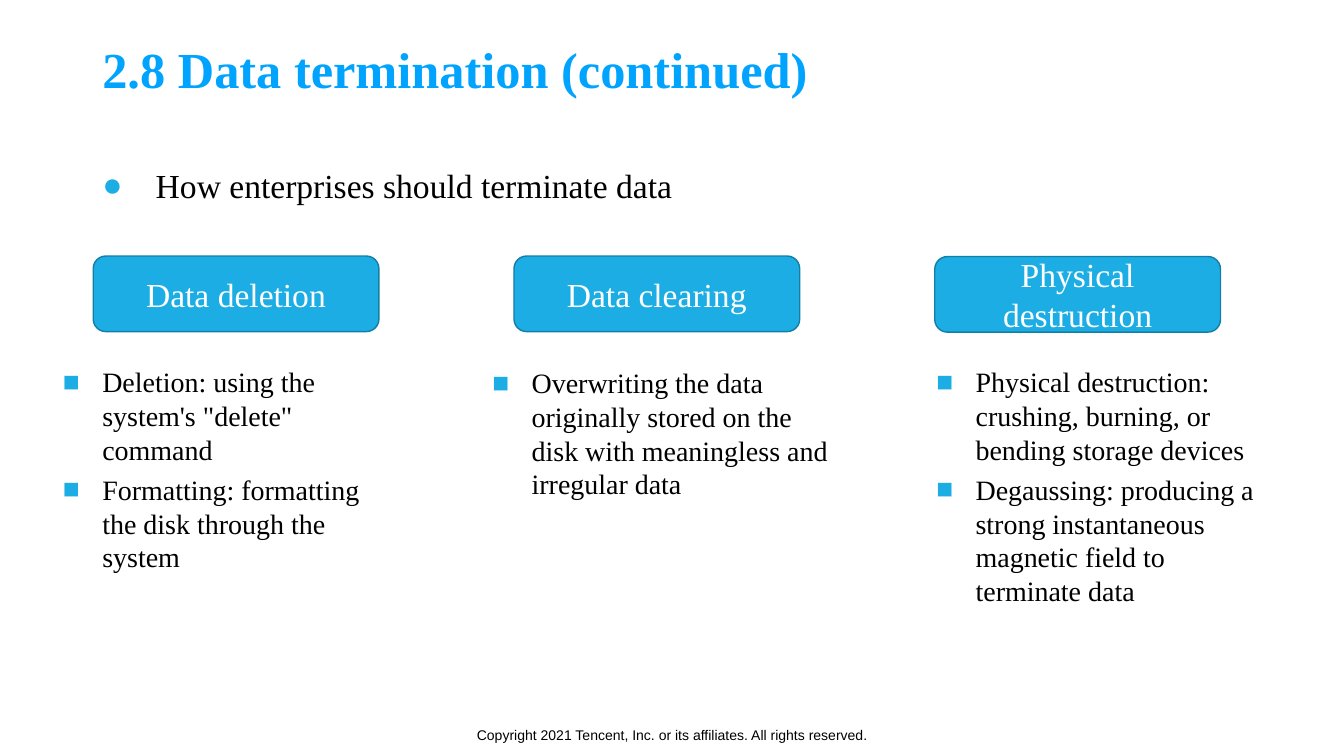
import lxml.etree
import pptx
import pptx.dml.color
import pptx.enum.shapes
import pptx.enum.text
import pptx.oxml.ns
import pptx.util

EMU_PER_PX = 9144  # 100 px to the inch
SERIF = "Times New Roman"
COLORS = {
    "title": "00A4FF",
    "accent": "1CADE4",
    "outline": "147EA6",
    "text": "000000",
    "label": "FFFFFF",
}
ALIGN = pptx.enum.text.PP_ALIGN
ANCHOR = pptx.enum.text.MSO_ANCHOR

# label, label top, list left, list top, list width, list items
METHODS = [
    ("Data deletion", 508, 0, 714, 752, [
        "Deletion: using the system's \"delete\" command",
        "Formatting: formatting the disk through the system",
    ]),
    ("Data clearing", 508, 852, 716, 811, [
        "Overwriting the data originally stored on the disk with "
        "meaningless and irregular data",
    ]),
    ("Physical destruction", 509, 1733, 714, 811, [
        "Physical destruction: crushing, burning, or bending storage devices",
        "Degaussing: producing a strong instantaneous magnetic field to "
        "terminate data",
    ]),
]
LABEL_LEFT, LABEL_STEP = 185, 835


def px(length):
    return pptx.util.Emu(length * EMU_PER_PX)


def rgb(name):
    return pptx.dml.color.RGBColor.from_string(COLORS[name])


def set_frame(shape, anchor):
    frame = shape.text_frame
    frame.word_wrap = True
    frame.auto_size = pptx.enum.text.MSO_AUTO_SIZE.NONE
    frame.vertical_anchor = anchor
    frame.margin_left = frame.margin_right = px(20)
    frame.margin_top = frame.margin_bottom = px(10)
    return frame


def add_run(para, text, size, color, font=SERIF, bold=False):
    span = para.add_run()
    span.text = text
    span.font.name = font
    span.font.size = pptx.util.Pt(size)
    span.font.bold = bold
    span.font.color.rgb = rgb(color)


def set_bullet(para, char, indent, hanging):
    """Give the paragraph an accent-coloured bullet hanging left of its text."""
    props = para._p.get_or_add_pPr()
    props.set("marL", str(px(indent)))
    props.set("indent", str(-px(hanging)))
    qn = pptx.oxml.ns.qn
    color = lxml.etree.SubElement(props, qn("a:buClr"))
    lxml.etree.SubElement(color, qn("a:srgbClr"), val=COLORS["accent"])
    lxml.etree.SubElement(props, qn("a:buFont"), typeface=SERIF)
    lxml.etree.SubElement(props, qn("a:buChar"), char=char)


def add_text_box(page, left, top, width, height, anchor=ANCHOR.TOP):
    box = page.shapes.add_textbox(px(left), px(top), px(width), px(height))
    return set_frame(box, anchor)


def set_title(page, text):
    title = page.shapes.title
    title.left, title.top = px(183), px(90)
    title.width, title.height = px(2148), px(105)
    para = set_frame(title, ANCHOR.MIDDLE).paragraphs[0]
    para.alignment = ALIGN.LEFT
    para.line_spacing = 0.9
    add_run(para, text, 72, "title", bold=True)


def add_lead(page, text):
    para = add_text_box(page, 183, 278, 2332, 1102).paragraphs[0]
    set_bullet(para, "●", 106, 106)
    para.line_spacing = 1.5
    add_run(para, text, 48, "text")


def add_label(page, text, left, top):
    box = page.shapes.add_shape(
        pptx.enum.shapes.MSO_SHAPE.ROUNDED_RECTANGLE,
        px(left), px(top), px(567), px(150))
    box.shadow.inherit = False
    box.fill.solid()
    box.fill.fore_color.rgb = rgb("accent")
    box.line.color.rgb = rgb("outline")
    box.line.width = pptx.util.Pt(2)
    para = set_frame(box, ANCHOR.MIDDLE).paragraphs[0]
    para.alignment = ALIGN.CENTER
    add_run(para, text, 48, "label")


def add_list(page, items, left, top, width):
    frame = add_text_box(page, left, top, width, 587)
    for index, item in enumerate(items):
        para = frame.add_paragraph() if index else frame.paragraphs[0]
        para.level = 1
        set_bullet(para, "■", 183, 78)
        if index:
            para.space_before = pptx.util.Pt(10)
        add_run(para, item, 40, "text")


def add_footer(page, text):
    frame = add_text_box(page, 814, 1418, 1040, 80, ANCHOR.MIDDLE)
    para = frame.paragraphs[0]
    para.alignment = ALIGN.CENTER
    add_run(para, text, 20, "text", font="Arial")


def main():
    deck = pptx.Presentation()
    deck.slide_width, deck.slide_height = px(2667), px(1500)
    page = deck.slides.add_slide(deck.slide_layouts.get_by_name("Title Only"))
    set_title(page, "2.8 Data termination (continued)")
    add_lead(page, "How enterprises should terminate data")
    for column, method in enumerate(METHODS):
        label, label_top, list_left, list_top, list_width, items = method
        add_label(page, label, LABEL_LEFT + column * LABEL_STEP, label_top)
        add_list(page, items, list_left, list_top, list_width)
    add_footer(page, "Copyright 2021 Tencent, Inc. or its affiliates. "
                     "All rights reserved.")
    deck.save("out.pptx")


if __name__ == "__main__":
    main()
